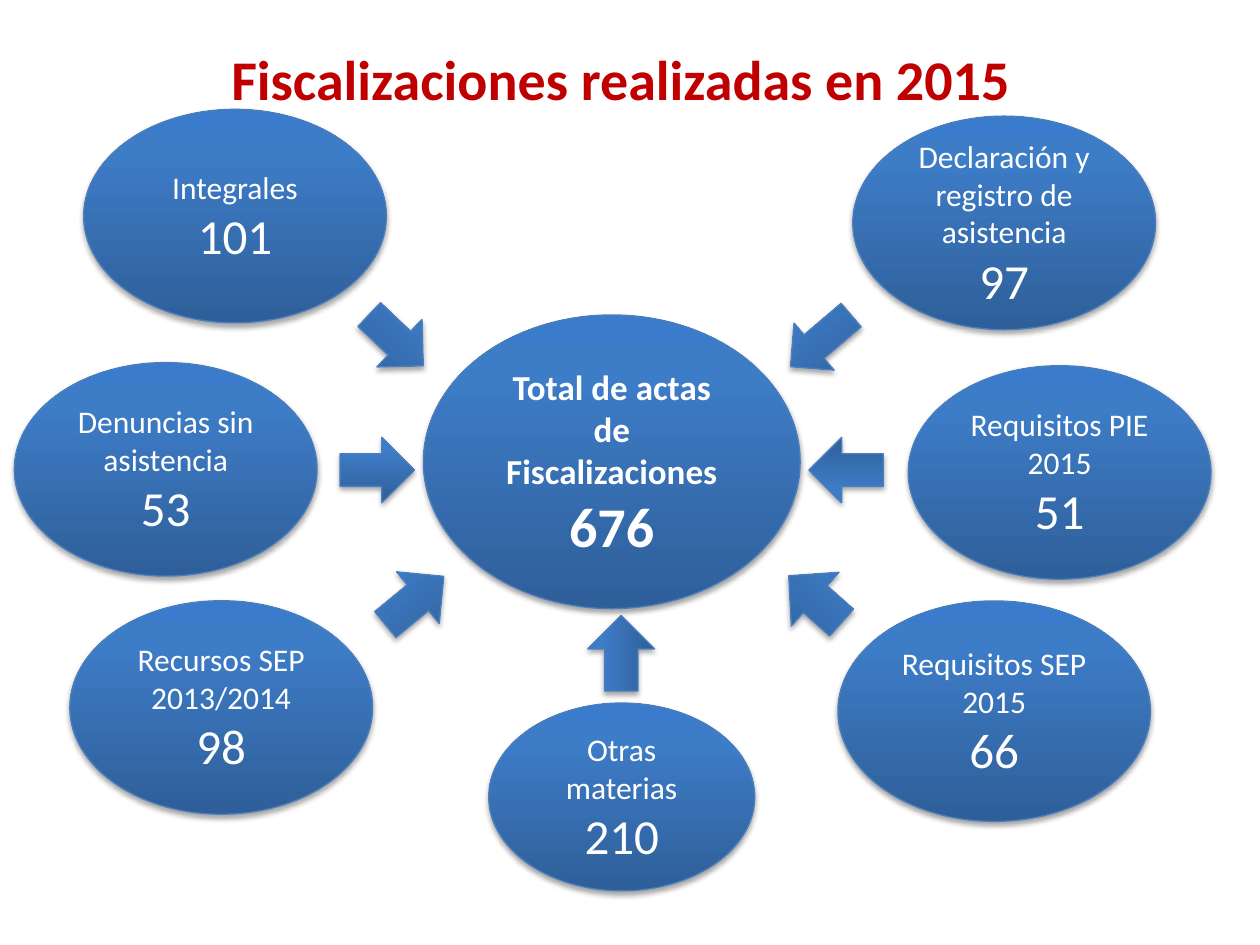
"""Build the slide on the inspections carried out in 2015."""
from copy import deepcopy
from dataclasses import dataclass

from lxml.etree import SubElement
from pptx import Presentation
from pptx.dml.color import RGBColor
from pptx.enum.shapes import MSO_SHAPE
from pptx.enum.text import MSO_ANCHOR, PP_ALIGN
from pptx.oxml.ns import qn
from pptx.util import Pt

TITLE = "Fiscalizaciones realizadas en 2015"
TITLE_BOX = (28.8, 14.4, 652.3, 54)

TOTAL = ("Total de actas de Fiscalizaciones ", "676", (349.6, 263.9), (215.3, 167.8))

STANDARD = (173, 122)
TOPICS = [
    ("Integrales", "101", (134.3, 123.5), STANDARD),
    ("Declaración y registro de asistencia", "97", (573.8, 127.4), STANDARD),
    ("Recursos SEP 2013/2014", "98", (126.4, 404.3), STANDARD),
    ("Requisitos SEP 2015", "66", (568.1, 406.4), (178.6, 126)),
    ("Denuncias sin asistencia", "53", (94.7, 268.2), STANDARD),
    ("Requisitos PIE 2015", "51", (605.5, 270), STANDARD),
    ("Otras materias", "210", (355.3, 455.4), (152, 107.3)),
]

RIGHT, LEFT = MSO_SHAPE.RIGHT_ARROW, MSO_SHAPE.LEFT_ARROW
ARROWS = [
    (RIGHT, (226.4, 194.4), (42.5, 37.4), 43.5),
    (LEFT, (469.1, 194.8), (45.4, 35.3), 319.6),
    (RIGHT, (236.9, 343.1), (43.2, 38.2), 320.5),
    (LEFT, (465.8, 342.4), (40.3, 41), 41.6),
    (RIGHT, (215.6, 268.6), (42.5, 37.4), 0),
    (RIGHT, (483.5, 268.6), (42.5, 37.4), 180),
    (RIGHT, (355, 373.3), (43.2, 38.2), 270),
]


@dataclass(frozen=True)
class Theme:
    """Colours and type sizes."""

    font: str = "Calibri"
    title: str = "C00000"
    text: str = "FFFFFF"
    line: str = "4B7EBC"
    shadow: str = "000000"
    gradient: tuple = ((0, "2F5F99"), (0.8, "3D7CC7"), (1, "3A7CCB"))
    title_size: int = 32
    total_sizes: tuple = (20, 32)
    topic_sizes: tuple = (18, 28)


THEME = Theme()


def style_run(run, size, color, bold=False):
    """Set the font of a run."""
    run.font.name = THEME.font
    run.font.size = Pt(size)
    run.font.bold = bold
    run.font.color.rgb = RGBColor.from_string(color)


def add_shadow(shape):
    """Give a shape a soft shadow below it."""
    shape.shadow.inherit = False
    effects = shape.element.spPr.find(qn("a:effectLst"))
    shadow = SubElement(effects, qn("a:outerShdw"), blurRad=str(Pt(3.1)),
                        dist=str(Pt(1.8)), dir="5400000", rotWithShape="0")
    color = SubElement(shadow, qn("a:srgbClr"), val=THEME.shadow)
    SubElement(color, qn("a:alpha"), val="35000")


def add_glossy_shape(group, kind, center, size, rotation=0):
    """Add a shape around its center with gradient, outline and shadow."""
    left, top = (middle - length / 2 for middle, length in zip(center, size))
    shape = group.shapes.add_shape(kind, Pt(left), Pt(top), *map(Pt, size))
    shape.rotation = rotation
    shape.fill.gradient()
    shape.fill.gradient_angle = 90
    stops = shape.element.spPr.find(qn("a:gradFill")).find(qn("a:gsLst"))
    stops.append(deepcopy(stops[0]))
    for stop, (position, color) in zip(shape.fill.gradient_stops, THEME.gradient):
        stop.position = position
        stop.color.rgb = RGBColor.from_string(color)
    shape.line.color.rgb = RGBColor.from_string(THEME.line)
    shape.line.width = Pt(0.75)
    add_shadow(shape)
    return shape


def add_ellipse(group, center, size):
    """Add an ellipse and return its text frame."""
    frame = add_glossy_shape(group, MSO_SHAPE.OVAL, center, size).text_frame
    frame.word_wrap = True
    frame.vertical_anchor = MSO_ANCHOR.MIDDLE
    return frame


def add_total(group, label, count, center, size):
    """Add the central ellipse with label and count in one paragraph."""
    paragraph = add_ellipse(group, center, size).paragraphs[0]
    paragraph.text = label
    paragraph.add_run().text = count
    paragraph.alignment = PP_ALIGN.CENTER
    for run, points in zip(paragraph.runs, THEME.total_sizes):
        style_run(run, points, THEME.text, bold=True)


def add_topic(group, label, count, center, size):
    """Add an outer ellipse with the count below its label."""
    frame = add_ellipse(group, center, size)
    frame.text = f"{label}\n{count}"
    for paragraph, points in zip(frame.paragraphs, THEME.topic_sizes):
        paragraph.alignment = PP_ALIGN.CENTER
        style_run(paragraph.runs[0], points, THEME.text)


def add_title(slide):
    """Add the centered title."""
    frame = slide.shapes.add_textbox(*map(Pt, TITLE_BOX)).text_frame
    frame.word_wrap = True
    frame.text = TITLE
    paragraph = frame.paragraphs[0]
    paragraph.alignment = PP_ALIGN.CENTER
    paragraph.line_spacing = 1.2
    style_run(paragraph.runs[0], THEME.title_size, THEME.title, bold=True)


def main():
    """Build and save the presentation."""
    presentation = Presentation()
    presentation.slide_width, presentation.slide_height = Pt(720), Pt(540)
    slide = presentation.slides.add_slide(presentation.slide_layouts[6])
    add_title(slide)
    diagram = slide.shapes.add_group_shape()
    add_total(diagram, *TOTAL)
    for topic in TOPICS:
        add_topic(diagram, *topic)
    for arrow in ARROWS:
        add_glossy_shape(diagram, *arrow)
    presentation.save("out.pptx")


if __name__ == "__main__":
    main()
